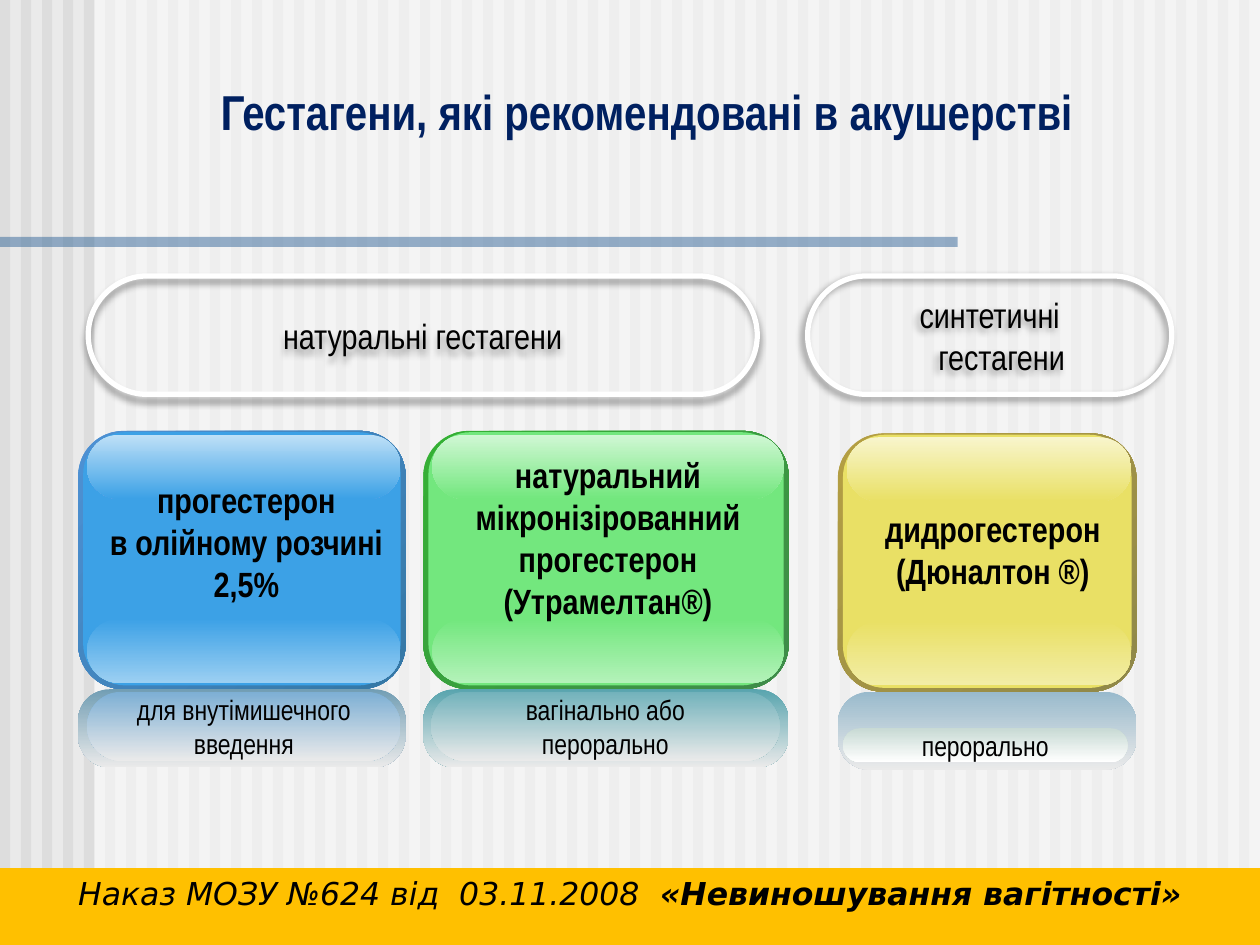
import pptx
import pptx.util
import pptx.dml.color
import pptx.enum.shapes
import pptx.enum.text
import pptx.oxml
import pptx.oxml.ns
from pptx.util import Inches

THEME = {
    "font": "Arial Narrow", "footer_font": "DejaVu Sans",
    "title_size": 28, "text_size": 20, "route_size": 16, "footer_size": 18,
    "text": "000000", "title": "002060", "background": "EAEAEA",
    "stripe": "DDDDDD", "veil": "FFFFFF", "rule": "336699",
    "outline": "FFFFFF", "footer": "FFC000",
}

TITLE = "Гестагени, які рекомендовані в акушерстві"
FOOTER = [("Наказ МОЗУ №624 від  03.11.2008  ", False),
          ("«Невиношування вагітності»", True)]

# group heading: lines, left, width, shadow direction in degrees
GROUPS = [
    (["натуральні гестагени"], 0.7, 5.31, 90),
    (["синтетичні", "   гестагени"], 6.41, 2.89, 135),
]

# label and route boxes are left, top, width, height
CARDS = [
    {"left": 0.62, "top": 3.42, "width": 2.6,
     "drug": ["прогестерон", "в олійному розчині 2,5%"],
     "drug_box": (0.72, 3.75, 2.47, 1.11),
     "route": ["для внутімишечного", "введення"], "route_box": (0.69, 5.49, 2.49, 0.55),
     "rim": ("4E91D4", "3477A4"), "face": "3CA1E6", "gloss": "BEE0F7", "glow": "9BCFF2",
     "reflection": ("729EB4", "EAEAEA"), "route_fill": ("7DAFD4", "EAEAEA")},
    {"left": 3.36, "top": 3.42, "width": 2.9,
     "drug": ["натуральний мікронізірованний", "прогестерон", "(Утрамелтан®)"],
     "drug_box": (3.45, 3.55, 2.75, 1.45),
     "route": ["вагінально або", "перорально"], "route_box": (3.42, 5.49, 2.77, 0.55),
     "rim": ("34B034", "3F8B4A"), "face": "73E77E", "gloss": "D0F7D4", "glow": "B3F2B9",
     "reflection": ("58A4AE", "EAEAEA"), "route_fill": ("72B2BB", "EAEAEA")},
    {"left": 6.65, "top": 3.44, "width": 2.37,
     "drug": ["дидрогестерон", "(Дюналтон ®)"],
     "drug_box": (6.81, 3.98, 2.14, 0.77),
     "route": ["перорально"], "route_box": (6.69, 5.78, 2.26, 0.27),
     "rim": ("B59F43", "8F8849"), "face": "E9E065", "gloss": "F8F5CC", "glow": "F2EDA6",
     "reflection": ("99BACC", "EAEAEA"), "route_fill": ("C8DAD4", "FFFFFF")},
]

RECT = pptx.enum.shapes.MSO_SHAPE.RECTANGLE
ROUNDED = pptx.enum.shapes.MSO_SHAPE.ROUNDED_RECTANGLE
TOP = pptx.enum.text.MSO_ANCHOR.TOP
MIDDLE = pptx.enum.text.MSO_ANCHOR.MIDDLE
rgb = pptx.dml.color.RGBColor.from_string


def add_block(slide, box, fill=None, radius=None, angle=90, alpha=None):
    """Add a borderless rectangle; a pair of colours gives a gradient, a radius rounds it."""
    block = slide.shapes.add_shape(RECT if radius is None else ROUNDED, *map(Inches, box))
    block.shadow.inherit = False
    block.line.fill.background()
    if radius is not None:
        block.adjustments[0] = radius
    if fill is None:
        block.fill.background()
    elif isinstance(fill, tuple):
        block.fill.gradient()
        block.fill.gradient_angle = 360 - angle
        for stop, color in zip(block.fill.gradient_stops, fill):
            stop.color.rgb = rgb(color)
    else:
        block.fill.solid()
        block.fill.fore_color.rgb = rgb(fill)
    if alpha is not None:
        color = block.element.spPr.find(".//" + pptx.oxml.ns.qn("a:srgbClr"))
        color.append(pptx.oxml.parse_xml(
            f'<a:alpha {pptx.oxml.ns.nsdecls("a")} val="{alpha * 1000}"/>'))
    return block


def style(paragraph, size, color=THEME["text"], font=THEME["font"], bold=None, italic=None):
    paragraph.alignment = pptx.enum.text.PP_ALIGN.CENTER
    paragraph.font.name = font
    paragraph.font.size = pptx.util.Pt(size)
    paragraph.font.color.rgb = rgb(color)
    paragraph.font.bold = bold
    paragraph.font.italic = italic


def write(frame, lines, size, anchor=MIDDLE, wrap=False, **look):
    frame.word_wrap = wrap
    frame.vertical_anchor = anchor
    frame.text = "\n".join(lines)
    for paragraph in frame.paragraphs:
        style(paragraph, size, **look)


def cast_shadow(block, direction):
    effects = block.element.spPr.find(pptx.oxml.ns.qn("a:effectLst"))
    effects.append(pptx.oxml.parse_xml(
        f'<a:outerShdw {pptx.oxml.ns.nsdecls("a")} blurRad="{pptx.util.Pt(4)}" '
        f'dist="{pptx.util.Pt(3)}" dir="{direction * 60000}" rotWithShape="0">'
        '<a:srgbClr val="000000"><a:alpha val="40000"/></a:srgbClr></a:outerShdw>'))


def add_backdrop(slide):
    slide.background.fill.solid()
    slide.background.fill.fore_color.rgb = rgb(THEME["background"])
    for i in range(60):
        add_block(slide, (i / 6, 0, 0.08, 7.5), THEME["stripe"])
    add_block(slide, (0.75, 0, 9.25, 7.5), THEME["veil"], alpha=50)
    add_block(slide, (0, 1.88, 7.6, 0.08), THEME["rule"], alpha=50)


def add_card(slide, card):
    left, top, width = card["left"], card["top"], card["width"]
    inner_left, inner_width = left + 0.07, width - 0.11
    face = card["face"]
    add_block(slide, (left, top, width, 2.05), card["rim"], 0.175, angle=45)
    add_block(slide, (left + 0.04, top + 0.01, width - 0.08, 2.01), face, 0.167)
    add_block(slide, (inner_left, top + 1.49, inner_width, 0.51), (face, card["glow"]), 0.5)
    add_block(slide, (inner_left, top + 0.03, inner_width, 0.51), (card["gloss"], face), 0.5)
    add_block(slide, (left, top + 2.05, width, 0.62), card["reflection"], 0.404)
    route = add_block(slide, card["route_box"], card["route_fill"], 0.5)
    write(route.text_frame, card["route"], THEME["route_size"])
    drug = slide.shapes.add_textbox(*map(Inches, card["drug_box"]))
    write(drug.text_frame, card["drug"], THEME["text_size"], TOP, wrap=True, bold=True)


def add_group(slide, lines, left, width, direction):
    heading = add_block(slide, (left, 2.19, width, 0.94), radius=0.5)
    heading.line.color.rgb = rgb(THEME["outline"])
    heading.line.width = pptx.util.Pt(3)
    cast_shadow(heading, direction)
    write(heading.text_frame, lines, THEME["text_size"])


def add_title(slide):
    title = slide.shapes.title
    title.left, title.top, title.width, title.height = map(Inches, (0.83, 0.6, 8.6, 0.57))
    write(title.text_frame, [TITLE], THEME["title_size"], TOP, wrap=True,
          color=THEME["title"], bold=True)
    title.text_frame.auto_size = pptx.enum.text.MSO_AUTO_SIZE.NONE
    title.element.getparent().append(title.element)  # in front of the stripes


def add_footer(slide):
    footer = add_block(slide, (0, 6.89, 10, 0.61), THEME["footer"])
    footer.text_frame.vertical_anchor = TOP
    paragraph = footer.text_frame.paragraphs[0]
    style(paragraph, THEME["footer_size"], font=THEME["footer_font"], italic=True)
    for text, bold in FOOTER:
        run = paragraph.add_run()
        run.text = text
        run.font.bold = bold


def main():
    deck = pptx.Presentation()
    deck.slide_width, deck.slide_height = Inches(10), Inches(7.5)
    slide = deck.slides.add_slide(deck.slide_layouts.get_by_name("Title Only"))
    add_backdrop(slide)
    for card in CARDS:
        add_card(slide, card)
    for group in GROUPS:
        add_group(slide, *group)
    add_title(slide)
    add_footer(slide)
    deck.save("out.pptx")


if __name__ == "__main__":
    main()
